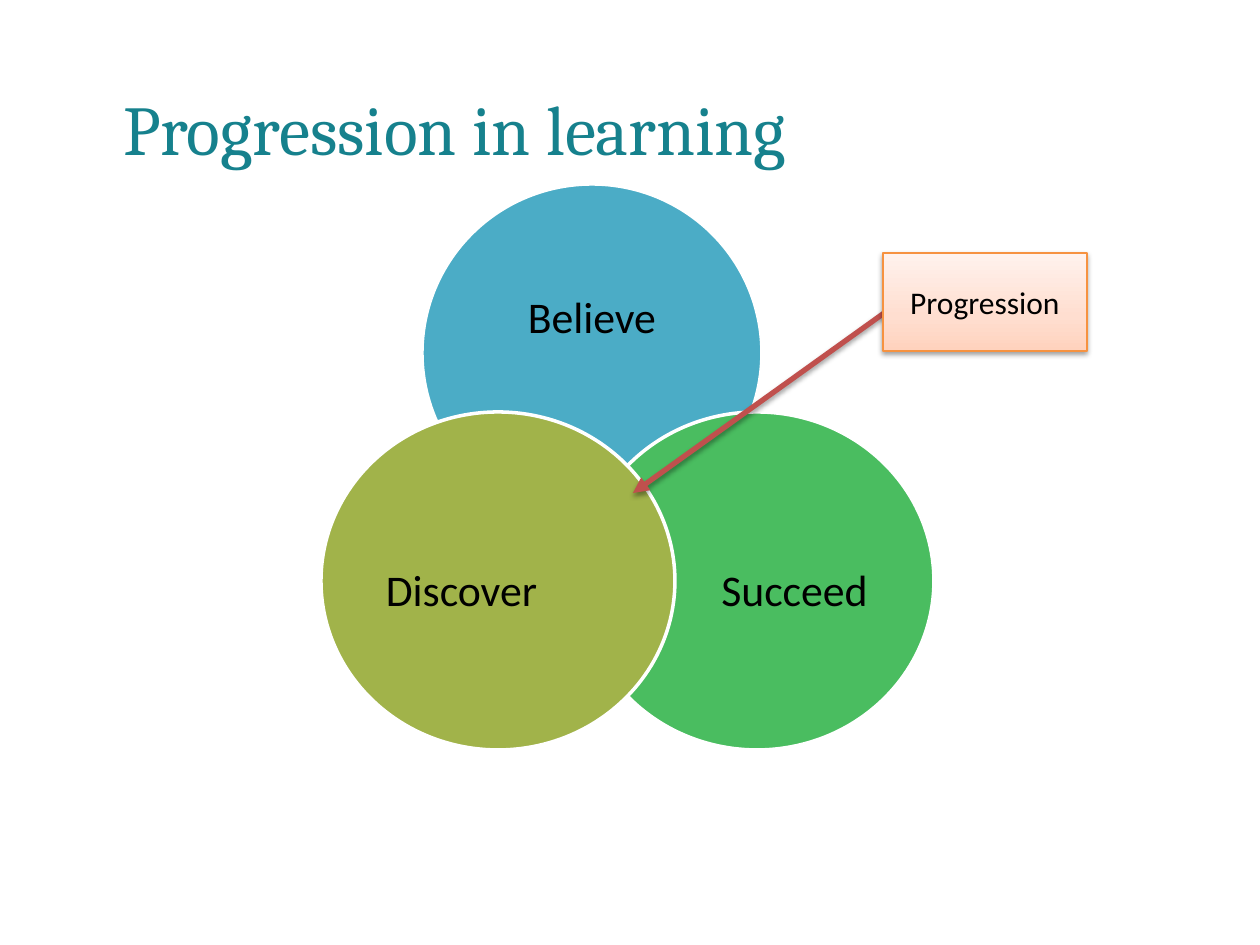
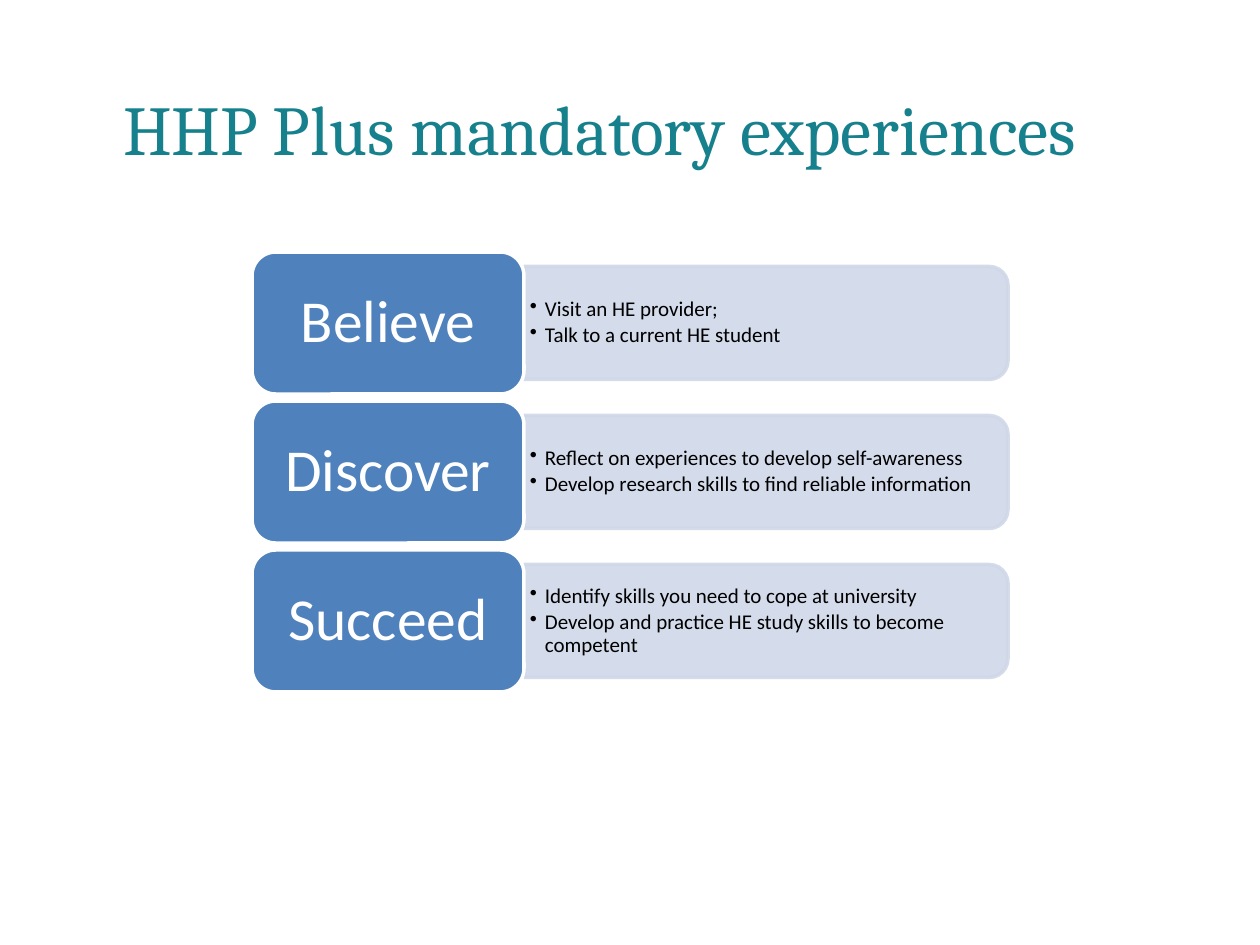
from lxml.etree import SubElement as Sub
from pptx import Presentation
from pptx.dml.color import RGBColor as Rgb
from pptx.enum.shapes import MSO_CONNECTOR as Conn, MSO_SHAPE as Kind
from pptx.enum.text import MSO_ANCHOR as Anchor, MSO_AUTO_SIZE as Fit, PP_ALIGN as Align
from pptx.oxml.ns import qn
from pptx.util import Emu, Pt

TEAL = Rgb(0x16, 0x81, 0x8D)
AQUA = Rgb(0x4B, 0xAC, 0xC6)
GREEN = Rgb(0x4A, 0xBD, 0x60)
OLIVE = Rgb(0xA1, 0xB3, 0x4A)
RED = Rgb(0xC0, 0x50, 0x4D)
ORANGE = Rgb(0xF6, 0x92, 0x40)
BLUE = Rgb(0x4F, 0x81, 0xBD)
PALE = Rgb(0xD0, 0xD8, 0xE8)
BLACK = Rgb(0, 0, 0)
WHITE = Rgb(255, 255, 255)
PEACH = ((0, "FFD2BD"), (35, "FFDED0"), (100, "FFF2ED"))
SCALE = 914400 / 126


def px(*nums):
    return [Emu(round(n * SCALE)) for n in nums]


def put(item, **form):
    for key, val in form.items():
        setattr(item, key, val)


class Deck:
    body = "Calibri"
    head = "Cambria"

    def __init__(self):
        self.prs = Presentation()
        wide, high = px(1260, 945)
        put(self.prs, slide_width=wide, slide_height=high)

    def page(self, title):
        self.slide = self.prs.slides.add_slide(self.prs.slide_layouts[5])
        box = self.slide.shapes.title
        left, top, wide, high = px(123, 96, 1062, 89)
        put(box, left=left, top=top, width=wide, height=high)
        self.label(box, [title], 40, TEAL, face=self.head, anchor=Anchor.TOP,
                   align=Align.LEFT, lead=Pt(42))

    def label(self, box, lines, size, color, face=body, anchor=Anchor.MIDDLE,
              align=Align.CENTER, lead=0.9, pad=(0, 0), after=0, dots=False):
        side, edge = px(*pad)
        frame = box.text_frame
        put(frame, word_wrap=True, auto_size=Fit.NONE, vertical_anchor=anchor,
            margin_left=side, margin_right=side, margin_top=edge, margin_bottom=edge)
        for num, line in enumerate(lines):
            para = frame.add_paragraph() if num else frame.paragraphs[0]
            if dots:
                props = para._p.get_or_add_pPr()
                indent = px(15)[0]
                props.set("marL", str(indent))
                props.set("indent", str(-indent))
                Sub(props, qn("a:buChar"), char="•")
            put(para, alignment=align, line_spacing=lead,
                space_before=Pt(0), space_after=Pt(after))
            run = para.add_run()
            run.text = line
            put(run.font, name=face, size=Pt(size), bold=False)
            run.font.color.rgb = color

    def text(self, spot, lines, size, color, **form):
        box = self.slide.shapes.add_textbox(*px(*spot))
        self.label(box, lines, size, color, **form)

    def shape(self, kind, spot, fill, edge, width=2):
        item = self.slide.shapes.add_shape(kind, *px(*spot))
        item.shadow.inherit = False
        item.fill.solid()
        item.fill.fore_color.rgb = fill
        item.line.color.rgb = edge
        item.line.width = Pt(width)
        return item

    def fade(self, item, part):
        for tone in item._element.spPr.iter(qn("a:srgbClr")):
            Sub(tone, qn("a:alpha"), val=str(part * 1000))

    def blend(self, item, stops):
        item.fill.gradient()
        item.fill.gradient_angle = 90
        group = item._element.spPr.find(qn("a:gradFill")).find(qn("a:gsLst"))
        for old in list(group):
            group.remove(old)
        for pos, tone in stops:
            stop = Sub(group, qn("a:gs"), pos=str(pos * 1000))
            Sub(stop, qn("a:srgbClr"), val=tone)

    def shade(self, item):
        props = item._element.spPr
        group = props.find(qn("a:effectLst"))
        if group is None:
            group = Sub(props, qn("a:effectLst"))
        cast = Sub(group, qn("a:outerShdw"), blurRad=str(Pt(3.1)), dist=str(Pt(1.6)),
                   dir="5400000", rotWithShape="0")
        tone = Sub(cast, qn("a:srgbClr"), val=str(BLACK))
        Sub(tone, qn("a:alpha"), val="38000")

    def arrow(self, start, end, color, width):
        item = self.slide.shapes.add_connector(Conn.STRAIGHT, *px(*start, *end))
        item.line.color.rgb = color
        item.line.width = Pt(width)
        Sub(item._element.spPr.find(qn("a:ln")), qn("a:tailEnd"), type="triangle")
        self.shade(item)


def venn(deck):
    deck.page("Progression in learning")
    rings = (
        ("Believe", AQUA, (422, 184, 340, 338), (467, 243, 250, 152)),
        ("Succeed", GREEN, (580, 412, 354, 338), (688, 500, 213, 185)),
        ("Discover", OLIVE, (321, 412, 354, 338), (355, 500, 213, 185)),
    )
    for name, color, spot, area in rings:
        deck.shape(Kind.OVAL, spot, color, WHITE)
        deck.text(area, [name], 25, BLACK)
    deck.arrow((887, 311), (633, 493), RED, 3)
    note = deck.shape(Kind.RECTANGLE, (883, 253, 204, 98), WHITE, ORANGE, 0.75)
    deck.blend(note, PEACH)
    deck.shade(note)
    deck.label(note, ["Progression"], 18, BLACK, lead=1.0, pad=(13, 6))


def steps(deck):
    deck.page("HHP Plus mandatory experiences")
    rows = (
        ("Believe", ["Visit an HE provider;", "Talk to a current HE student"]),
        ("Discover", ["Reflect on experiences to develop self-awareness",
                      "Develop research skills to find reliable information"]),
        ("Succeed", ["Identify skills you need to cope at university",
                     "Develop and practice HE study skills to become competent"]),
    )
    left, top, wide, high, gap = 252, 252, 272, 142, 7
    long, thick, inner = 484, 113, 102
    side = left + wide
    for num, (name, lines) in enumerate(rows):
        edge = top + num * (high + gap)
        mid = edge + high / 2
        spot = (side + (long - thick) / 2, mid - long / 2, thick, long)
        bar = deck.shape(Kind.ROUND_2_SAME_RECTANGLE, spot, PALE, PALE)
        bar.rotation = 90
        deck.fade(bar, 90)
        deck.text((side, mid - inner / 2, 479, inner), lines, 12, BLACK,
                  align=Align.LEFT, pad=(6, 4), after=1.8, dots=True)
        tile = deck.shape(Kind.ROUNDED_RECTANGLE, (left, edge, wide, high), BLUE, WHITE)
        deck.label(tile, [name], 34, WHITE, pad=(18, 9))


def main():
    deck = Deck()
    venn(deck)
    steps(deck)
    deck.prs.save("out.pptx")


if __name__ == "__main__":
    main()
